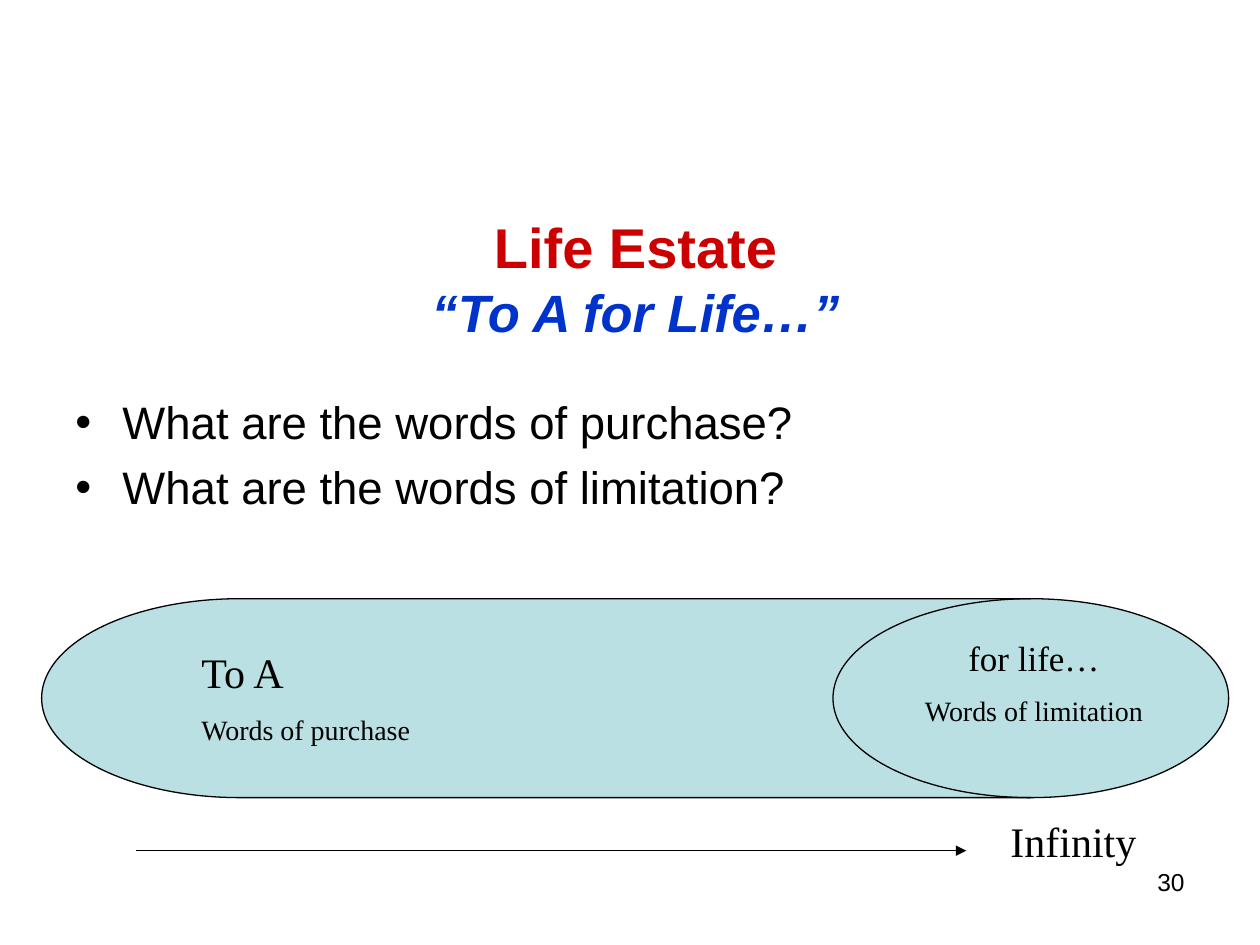
from lxml.etree import SubElement
from pptx import Presentation
from pptx.dml.color import RGBColor
from pptx.enum.shapes import MSO_CONNECTOR, MSO_SHAPE
from pptx.enum.text import MSO_ANCHOR, PP_ALIGN
from pptx.oxml.ns import qn
from pptx.util import Cm, Pt

BLACK = RGBColor(0x00, 0x00, 0x00)
RED = RGBColor(0xCC, 0x00, 0x00)
BLUE = RGBColor(0x00, 0x33, 0xCC)
PALE_TEAL = RGBColor(0xBB, 0xE0, 0xE3)
SANS, SERIF = "Arial", "Times New Roman"

TITLE_BOX = (0.43, 3.38, 24.77, 4.45)
TITLE_RUNS = [
    ("Life Estate", {"size": Pt(32), "color": RED, "italic": False}),
    ("“To A for Life…”", {"size": Pt(30), "color": BLUE, "italic": True}),
]
DRUM_BOX = (0.84, 12.07, 23.93, 4.01)
ARROW = (2.74, 17.15, 19.48, 17.15)

# Each box: position, font, alignment, space between, bulleted, (text, size) lines
TEXT_BOXES = [
    ((1.27, 7.82, 22.86, 2.97), SANS, PP_ALIGN.LEFT, 6, True,
     [("What are the words of purchase?", 26),
      ("What are the words of limitation?", 26)]),
    ((3.81, 12.9, 6.35, 2.29), SERIF, PP_ALIGN.LEFT, 9, False,
     [("To A", 24), ("Words of purchase", 16)]),
    ((17.35, 12.7, 6.99, 2.13), SERIF, PP_ALIGN.CENTER, 9, False,
     [("for life…", 20), ("Words of limitation", 16)]),
    ((20.12, 16.31, 4.65, 1.27), SERIF, PP_ALIGN.LEFT, 0, False,
     [("Infinity", 24)]),
    ((18.21, 17.35, 5.92, 1.32), SANS, PP_ALIGN.RIGHT, 0, False,
     [("30", 14)]),
]


def lengths(values):
    return [Cm(value) for value in values]


def format_font(font, **values):
    for name, value in values.items():
        if name == "color":
            font.color.rgb = value
        else:
            setattr(font, name, value)


def add_bullet(paragraph):
    properties = paragraph._p.get_or_add_pPr()
    properties.set("marL", str(Cm(0.95)))
    properties.set("indent", str(-Cm(0.95)))
    SubElement(properties, qn("a:buFont"), typeface=SANS)
    SubElement(properties, qn("a:buChar"), char="•")


def fill_title(title):
    title.left, title.top, title.width, title.height = lengths(TITLE_BOX)
    title.text_frame.word_wrap = True
    title.text_frame.vertical_anchor = MSO_ANCHOR.MIDDLE
    paragraph = title.text_frame.paragraphs[0]
    paragraph.alignment = PP_ALIGN.CENTER
    for index, (text, values) in enumerate(TITLE_RUNS):
        if index:
            paragraph.add_line_break()
        run = paragraph.add_run()
        run.text = text
        format_font(run.font, name=SANS, bold=True, **values)


def add_text(slide, box, font_name, alignment, gap, bulleted, lines):
    frame = slide.shapes.add_textbox(*lengths(box)).text_frame
    frame.word_wrap = True
    for index, (text, size) in enumerate(lines):
        paragraph = frame.add_paragraph() if index else frame.paragraphs[0]
        paragraph.alignment = alignment
        if index:
            paragraph.space_before = Pt(gap)
        if bulleted:
            add_bullet(paragraph)
        run = paragraph.add_run()
        run.text = text
        format_font(run.font, name=font_name, size=Pt(size), color=BLACK)


def set_line(line):
    line.color.rgb = BLACK
    line.width = Pt(0.75)


def add_drum(slide):
    drum = slide.shapes.add_shape(
        MSO_SHAPE.FLOWCHART_DIRECT_ACCESS_STORAGE, *lengths(DRUM_BOX))
    drum.shadow.inherit = False
    drum.fill.solid()
    drum.fill.fore_color.rgb = PALE_TEAL
    set_line(drum.line)


def add_arrow(slide):
    arrow = slide.shapes.add_connector(MSO_CONNECTOR.STRAIGHT, *lengths(ARROW))
    set_line(arrow.line)
    SubElement(arrow.line._get_or_add_ln(), qn("a:tailEnd"), type="triangle")
    SubElement(arrow._element.spPr, qn("a:effectLst"))


def main():
    presentation = Presentation()
    presentation.slide_width, presentation.slide_height = Cm(25.4), Cm(19.05)
    slide = presentation.slides.add_slide(presentation.slide_layouts[5])
    fill_title(slide.shapes.title)
    add_drum(slide)
    add_arrow(slide)
    for text_box in TEXT_BOXES:
        add_text(slide, *text_box)
    presentation.save("out.pptx")


if __name__ == "__main__":
    main()
